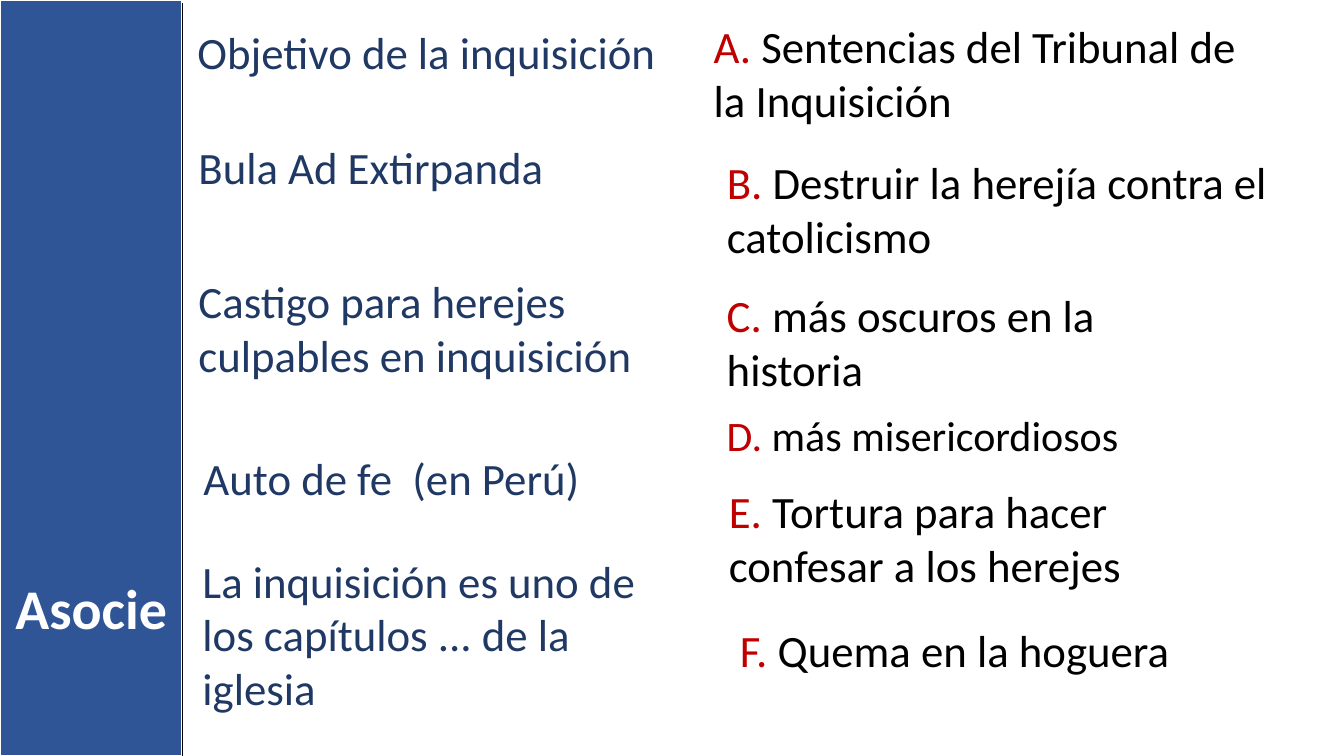
from dataclasses import dataclass

from lxml.etree import SubElement
from pptx import Presentation
from pptx.dml.color import RGBColor as Rgb
from pptx.enum.shapes import MSO_CONNECTOR as Connector, MSO_SHAPE as Shape
from pptx.enum.text import MSO_ANCHOR as Anchor, MSO_AUTO_SIZE as AutoSize, PP_ALIGN as Align
from pptx.oxml.ns import qn
from pptx.util import Inches, Pt


@dataclass(frozen=True)
class Theme:
    font: str = "Calibri"
    rail: Rgb = Rgb(0x2F, 0x55, 0x97)
    term: Rgb = Rgb(0x20, 0x38, 0x64)
    letter: Rgb = Rgb(0xC0, 0x00, 0x00)
    ink: Rgb = Rgb(0x00, 0x00, 0x00)
    paper: Rgb = Rgb(0xFF, 0xFF, 0xFF)
    heading_size: int = 40
    body_size: int = 32
    small_size: int = 30


@dataclass(frozen=True)
class Box:
    left: float
    top: float
    width: float
    height: float

    def place(self, left, top, width, height):
        return [Inches(n) for n in (self.left + left, self.top + top, width, height)]


THEME = Theme()
WIDTH, HEIGHT = 13.33, 7.5
RAIL_WIDTH = 1.81
ANSWERS_LEFT = 6.98
ONE_LINE, TWO_LINES, THREE_LINES = 0.64, 1.18, 1.72

TERMS = [
    ("Objetivo de la inquisición", 0.05, 0.2, 5.11, ONE_LINE),
    ("Bula Ad Extirpanda", 0.06, 1.34, 4.94, ONE_LINE),
    ("Castigo para herejes culpables en inquisición", 0.06, 2.67, 5.1, TWO_LINES),
    ("Auto de fe  (en Perú)", 0.11, 4.42, 4.94, ONE_LINE),
    ("La inquisición es uno de los capítulos ... de la iglesia", 0.1, 5.44, 4.77, THREE_LINES),
]
ANSWERS = [
    ("Sentencias del Tribunal de la Inquisición", 0, 0.14, 5.79, TWO_LINES, THEME.body_size),
    ("Destruir la herejía contra el catolicismo", 0.13, 1.49, 6.11, TWO_LINES, THEME.body_size),
    ("más oscuros en la historia", 0.13, 2.81, 5.23, TWO_LINES, THEME.body_size),
    ("más misericordiosos", 0.13, 4.01, 5.76, 0.61, THEME.small_size),
    ("Tortura para hacer confesar a los herejes", 0.15, 4.75, 5.53, TWO_LINES, THEME.body_size),
    ("Quema en la hoguera", 0.26, 6.13, 4.97, ONE_LINE, THEME.body_size),
]


def add_rail(slide, box, heading):
    rail = slide.shapes.add_shape(Shape.RECTANGLE, *box.place(0, 0, box.width, box.height))
    rail.shadow.inherit = False
    rail.fill.solid()
    rail.fill.fore_color.rgb = THEME.rail
    rail.line.color.rgb = THEME.paper
    rail.line.width = Pt(1.5)

    title = slide.shapes.title
    title.left, title.top, title.width, title.height = box.place(0, 5.64, box.width, 0.77)
    rail._element.addnext(title._element)
    frame = title.text_frame
    frame.text = heading
    frame.word_wrap = True
    frame.auto_size = AutoSize.SHAPE_TO_FIT_TEXT
    frame.vertical_anchor = Anchor.TOP
    paragraph = frame.paragraphs[0]
    paragraph.alignment = Align.CENTER
    paragraph.font.name = THEME.font
    paragraph.font.size = Pt(THEME.heading_size)
    paragraph.font.bold = True
    paragraph.font.color.rgb = THEME.paper

    right = Inches(box.left + box.width)
    edge = slide.shapes.add_connector(
        Connector.STRAIGHT, right, Inches(box.top + 0.03), right, Inches(box.top + box.height))
    edge.line.color.rgb = THEME.ink
    edge.line.width = Pt(1)
    SubElement(edge._element.spPr, qn("a:effectLst"))


def add_entry(slide, place, size):
    entry = slide.shapes.add_textbox(*place).text_frame
    entry.word_wrap = True
    entry.auto_size = AutoSize.SHAPE_TO_FIT_TEXT
    paragraph = entry.paragraphs[0]
    paragraph.font.name = THEME.font
    paragraph.font.size = Pt(size)
    return paragraph


def add_terms(slide, box):
    for term, *place in TERMS:
        paragraph = add_entry(slide, box.place(*place), THEME.body_size)
        paragraph.font.color.rgb = THEME.term
        paragraph.add_run().text = term


def add_answers(slide, box):
    for letter, (answer, *place, size) in zip("ABCDEF", ANSWERS):
        paragraph = add_entry(slide, box.place(*place), size)
        for words, color in ((f"{letter}. ", THEME.letter), (answer, THEME.ink)):
            run = paragraph.add_run()
            run.text = words
            run.font.color.rgb = color


def main():
    deck = Presentation()
    deck.slide_width, deck.slide_height = Inches(WIDTH), Inches(HEIGHT)
    slide = deck.slides.add_slide(deck.slide_layouts.get_by_name("Title Only"))
    add_rail(slide, Box(0, 0, RAIL_WIDTH, HEIGHT), "Asocie")
    add_terms(slide, Box(RAIL_WIDTH, 0, ANSWERS_LEFT - RAIL_WIDTH, HEIGHT))
    add_answers(slide, Box(ANSWERS_LEFT, 0, WIDTH - ANSWERS_LEFT, HEIGHT))
    deck.save("out.pptx")


if __name__ == "__main__":
    main()
